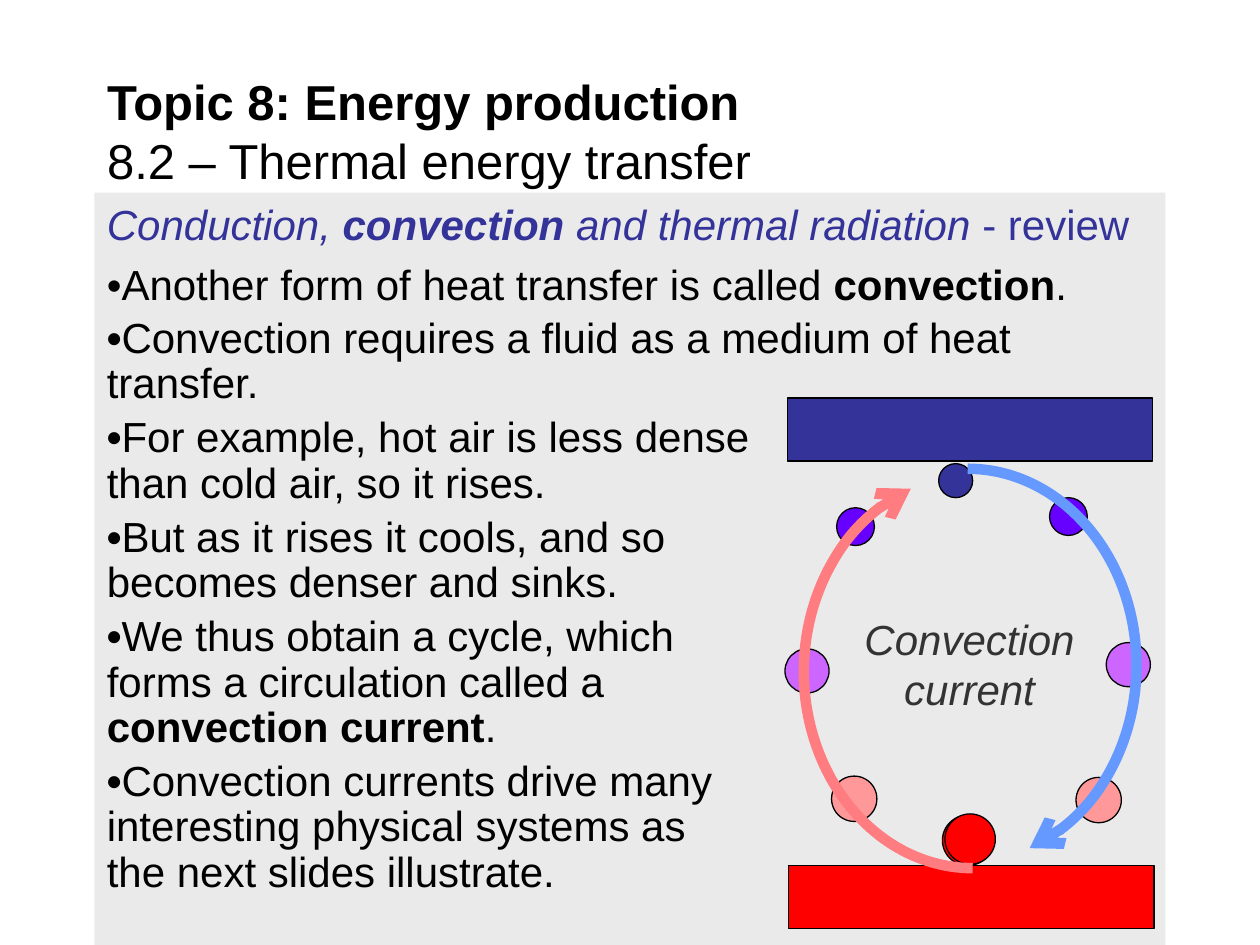
from dataclasses import dataclass

from lxml.etree import SubElement
from pptx import Presentation
from pptx.dml.color import RGBColor
from pptx.enum.shapes import MSO_SHAPE
from pptx.enum.text import MSO_ANCHOR, MSO_AUTO_SIZE, PP_ALIGN
from pptx.oxml.ns import qn
from pptx.util import Inches, Pt


@dataclass(frozen=True)
class Theme:
    font: str = "Arial"
    title: int = 28
    body: int = 24
    black: str = "000000"
    panel: str = "EAEAEA"
    label: str = "333333"
    cold: str = "333399"
    cool: str = "6600FF"
    mild: str = "CC66FF"
    warm: str = "FF9999"
    hot: str = "FF0000"
    rise: str = "FF7C80"
    sink: str = "6699FF"


@dataclass(frozen=True)
class Ball:
    left: float
    top: float
    size: float
    color: str


@dataclass(frozen=True)
class Arc:
    left: float
    top: float
    start: float
    end: float
    color: str


THEME = Theme()
PLATE = (2.9, 0.5)
ORBIT = (2.68, 3.12)

PLATES = [(6.26, 6.87, THEME.hot), (6.25, 3.16, THEME.cold)]

# Clockwise from the hot plate, back to it
BALLS = [
    Ball(7.48, 6.47, 0.4, THEME.hot),
    Ball(6.6, 6.16, 0.36, THEME.warm),
    Ball(6.23, 5.15, 0.35, THEME.mild),
    Ball(6.64, 4.03, 0.3, THEME.cool),
    Ball(7.45, 3.68, 0.27, THEME.cold),
    Ball(8.33, 3.95, 0.3, THEME.cool),
    Ball(8.78, 5.1, 0.35, THEME.mild),
    Ball(8.54, 6.17, 0.36, THEME.warm),
    Ball(7.5, 6.46, 0.4, THEME.hot),
]

# Angles in degrees, clockwise from the right
ARCS = [
    Arc(6.38, 3.77, 90, 251.3, THEME.rise),
    Arc(6.34, 3.72, 270, 71.3, THEME.sink),
]

# Runs are (text, bold, italic); "\v" breaks a line
HEAD = [
    ("Conduction, ", False, True),
    ("convection ", True, True),
    ("and thermal radiation", False, True),
    (" - review", False, False),
]
FIRST = [
    ("•Another form of heat transfer is called ", False, False),
    ("convection", True, False),
    (".", False, False),
]
POINTS = [
    [("Convection requires a fluid as a medium of heat transfer.", False, False)],
    [("For example, hot air is less dense\vthan cold air, so it rises.", False, False)],
    [("But as it rises it cools, and so\vbecomes denser and sinks.", False, False)],
    [
        ("We thus obtain a cycle, which\vforms a circulation called a\v", False, False),
        ("convection current", True, False),
        (".", False, False),
    ],
    [
        (
            "Convection currents drive many\vinteresting physical systems as\v"
            "the next slides illustrate.",
            False,
            False,
        )
    ],
]


def rgb(code: str) -> RGBColor:
    return RGBColor.from_string(code)


def style(para, size: int, color: str) -> None:
    para.font.name = THEME.font
    para.font.size = Pt(size)
    para.font.color.rgb = rgb(color)


def write(para, runs: list, size: int, color: str) -> None:
    style(para, size, color)
    para.alignment = PP_ALIGN.LEFT
    for text, bold, slant in runs:
        for i, part in enumerate(text.split("\v")):
            if i:
                para.add_line_break()
            if part:
                run = para.add_run()
                run.text = part
                run.font.bold = bold
                run.font.italic = slant


def draw(slide, kind, left: float, top: float, width: float, height: float,
         fill: str, line: str | None = None):
    shape = slide.shapes.add_shape(
        kind, Inches(left), Inches(top), Inches(width), Inches(height))
    shape.shadow.inherit = False
    shape.fill.solid()
    shape.fill.fore_color.rgb = rgb(fill)
    if line:
        shape.line.color.rgb = rgb(line)
        shape.line.width = Pt(0.75)
    else:
        shape.line.fill.background()
    return shape


def sweep(slide, arc: Arc) -> None:
    shape = draw(slide, MSO_SHAPE.ARC, arc.left, arc.top, *ORBIT, arc.color, arc.color)
    shape.fill.background()
    shape.line.width = Pt(6)
    # Adjustments count 60000 per degree, scaled by 100000
    shape.adjustments[0] = arc.start * 0.6
    shape.adjustments[1] = arc.end * 0.6
    SubElement(shape.line._get_or_add_ln(), qn("a:tailEnd"), type="arrow")


def main() -> None:
    deck = Presentation()
    deck.slide_width, deck.slide_height = Inches(10), Inches(7.5)
    slide = deck.slides.add_slide(deck.slide_layouts[5])

    # Title
    title = slide.shapes.title
    title.left, title.top = Inches(0.75), Inches(0.58)
    title.width, title.height = Inches(8.5), Inches(0.91)
    frame = title.text_frame
    frame.auto_size = MSO_AUTO_SIZE.NONE
    frame.vertical_anchor = MSO_ANCHOR.MIDDLE
    write(frame.paragraphs[0], [
        ("Topic 8: Energy production\v", True, False),
        ("8.2 – Thermal energy transfer", False, False),
    ], THEME.title, THEME.black)

    # Text panel
    panel = draw(slide, MSO_SHAPE.RECTANGLE, 0.75, 1.53, 8.5, 5.97, THEME.panel)
    frame = panel.text_frame
    frame.word_wrap = True
    frame.vertical_anchor = MSO_ANCHOR.TOP
    write(frame.paragraphs[0], HEAD, THEME.body, THEME.cold)
    for i, runs in enumerate([FIRST, *POINTS]):
        para = frame.add_paragraph()
        para.space_before = Pt(5)
        if i:
            para.line_spacing = 0.9
            runs = [("•", True, False), *runs]
        write(para, runs, THEME.body, THEME.black)

    # Convection cycle
    for left, top, color in PLATES:
        draw(slide, MSO_SHAPE.RECTANGLE, left, top, *PLATE, color, THEME.black)
    for ball in BALLS:
        draw(slide, MSO_SHAPE.OVAL, ball.left, ball.top, ball.size, ball.size,
             ball.color, THEME.black)
    for arc in ARCS:
        sweep(slide, arc)

    # Cycle label
    label = slide.shapes.add_textbox(Inches(6.63), Inches(4.82), Inches(2.13), Inches(0.9))
    label.text_frame.word_wrap = True
    para = label.text_frame.paragraphs[0]
    para.text = "Convection current"
    para.alignment = PP_ALIGN.CENTER
    style(para, THEME.body, THEME.label)
    para.font.italic = True

    deck.save("out.pptx")


if __name__ == "__main__":
    main()
